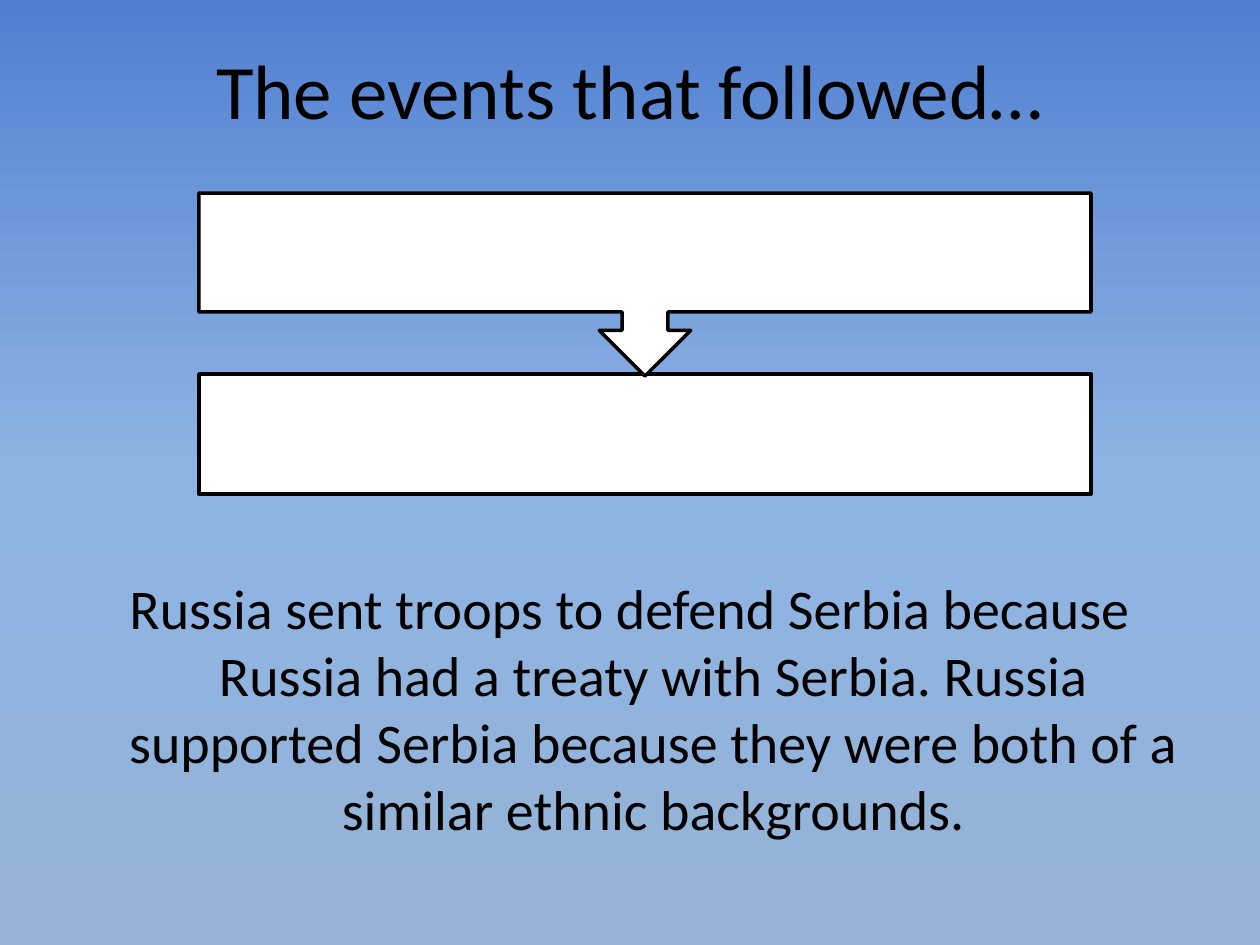
from lxml.etree import SubElement
from pptx import Presentation
from pptx.dml.color import RGBColor
from pptx.enum.dml import MSO_THEME_COLOR
from pptx.enum.shapes import MSO_SHAPE
from pptx.enum.text import MSO_ANCHOR, MSO_AUTO_SIZE, PP_ALIGN
from pptx.oxml.ns import qn
from pptx.util import Emu, Inches, Pt

BLACK = RGBColor(0x00, 0x00, 0x00)
WHITE = RGBColor(0xFF, 0xFF, 0xFF)
SKY_TOP = RGBColor(0x52, 0x80, 0xD1)
SKY_MIDDLE = RGBColor(0x8E, 0xB4, 0xE3)
SKY_BOTTOM = RGBColor(0x95, 0xB3, 0xD7)

PX_PER_INCH = 126


def px(length):
    return Emu(round(length * Inches(1) / PX_PER_INCH))


class SlideBuilder:
    font = "Calibri"
    line_width = Pt(2)

    def __init__(self, slide):
        self.slide = slide

    def background(self, colors):
        """Fill the background from top to bottom with evenly spaced colours."""
        fill = self.slide.background.fill
        fill.gradient()
        fill.gradient_angle = 270
        stop_list = self.slide.element.find(".//" + qn("a:gsLst"))
        for stop in list(stop_list):
            stop_list.remove(stop)
        for index, color in enumerate(colors):
            position = 100000 * index // (len(colors) - 1)
            stop = SubElement(stop_list, qn("a:gs"), pos=str(position))
            SubElement(stop, qn("a:srgbClr"), val=str(color))

    def placeholder(self, shape, box, text, size, anchor):
        shape.left, shape.top, shape.width, shape.height = map(px, box)
        frame = shape.text_frame
        frame.word_wrap = True
        frame.auto_size = MSO_AUTO_SIZE.NONE
        frame.vertical_anchor = anchor
        paragraph = frame.paragraphs[0]
        paragraph.alignment = PP_ALIGN.CENTER
        SubElement(paragraph._p.get_or_add_pPr(), qn("a:buNone"))
        run = paragraph.add_run()
        run.text = text
        run.font.name = self.font
        run.font.size = Pt(size)
        run.font.color.rgb = BLACK

    def box(self, group, kind, box, rotation=0):
        shape = group.shapes.add_shape(kind, *map(px, box))
        shape.rotation = rotation
        shape.shadow.inherit = False
        shape.fill.solid()
        shape.fill.fore_color.rgb = WHITE
        shape.line.color.rgb = BLACK
        shape.line.width = self.line_width


def main():
    presentation = Presentation()
    presentation.slide_width = Inches(10)
    presentation.slide_height = Inches(7.5)
    slide = presentation.slides.add_slide(presentation.slide_layouts[1])
    builder = SlideBuilder(slide)

    builder.background([SKY_TOP, SKY_MIDDLE, SKY_BOTTOM])
    builder.placeholder(slide.shapes.title, (63, 10, 1134, 158),
                        "The events that followed…", 44, MSO_ANCHOR.MIDDLE)
    builder.placeholder(
        slide.placeholders[1], (63, 567, 1134, 330),
        "Russia sent troops to defend Serbia because Russia had a treaty "
        "with Serbia. Russia supported Serbia because they were both of a "
        "similar ethnic backgrounds.", 32, MSO_ANCHOR.TOP)

    event_chain = slide.shapes.add_group_shape()
    builder.box(event_chain, MSO_SHAPE.RECTANGLE, (199, 374, 892, 120))
    builder.box(event_chain, MSO_SHAPE.UP_ARROW_CALLOUT, (199, 193, 892, 183),
                rotation=180)

    presentation.save("out.pptx")


if __name__ == "__main__":
    main()
